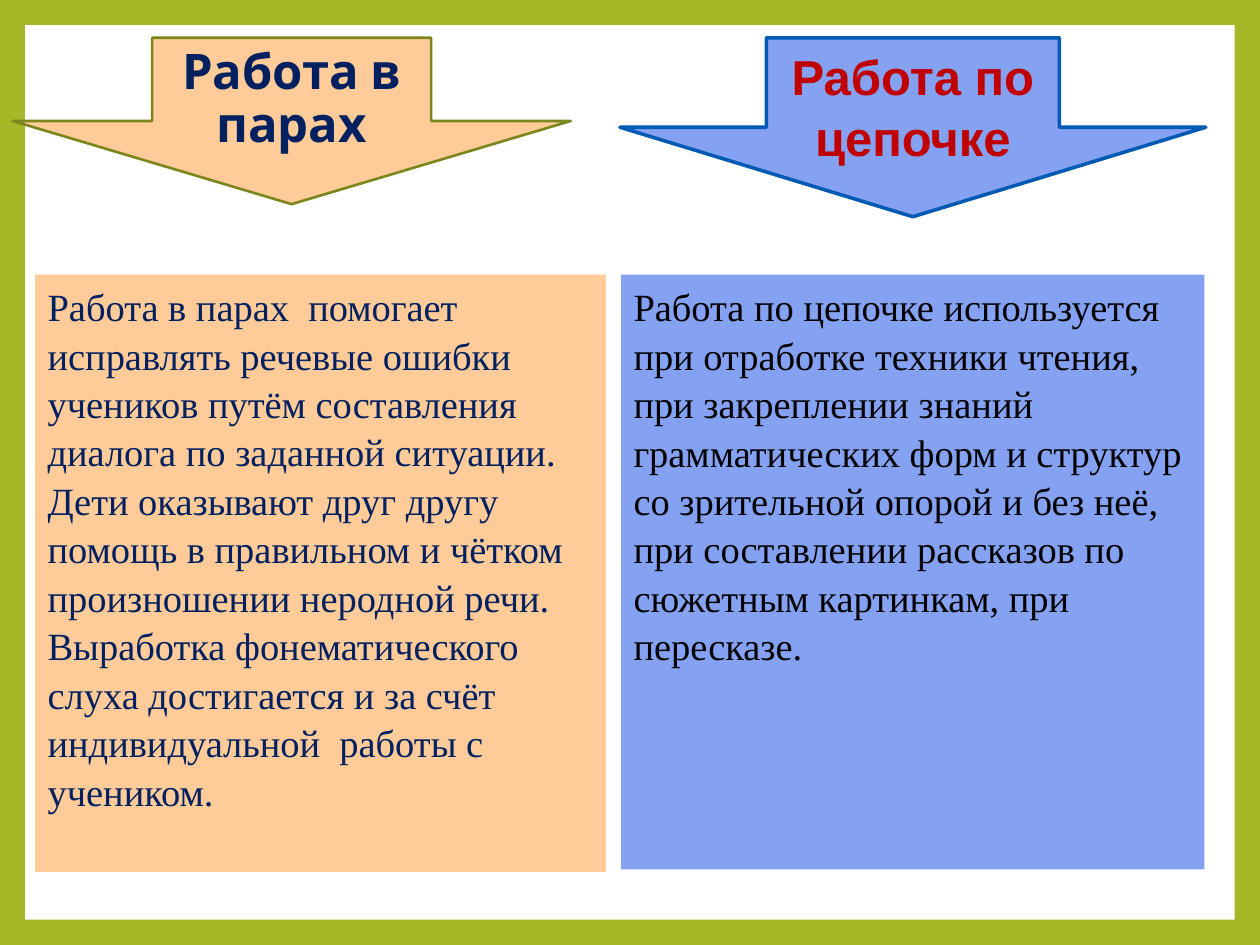
"""Builds a slide comparing pair work and chain work in two columns."""
import pptx
import pptx.dml.color
import pptx.enum.shapes
import pptx.enum.text
import pptx.util

SHAPE = pptx.enum.shapes.MSO_SHAPE
ANCHOR = pptx.enum.text.MSO_ANCHOR
ALIGN = pptx.enum.text.PP_ALIGN

COLORS = {
    "frame": "A6B727", "page": "FFFFFF", "peach": "FFCC99", "blue": "84A1F2",
    "olive": "7B871D", "azure": "0059B2", "navy": "002060", "red": "C00000",
    "black": "000000",
}
WIDTH, HEIGHT, MARGIN = 10, 7.5, 0.2
ARROW_TOP, PANEL_TOP = 0.3, 2.18

COLUMNS = [
    {
        "fill": "peach",
        "arrow": (0.1, 4.43, 1.32), "line": ("olive", 1.5),
        "title": "Работа в парах",
        "title_format": {"font": "Cabin", "color": "navy", "spacing": 0.9},
        "panel": (0.28, 4.53, 4.74),
        "body": "Работа в парах  помогает исправлять речевые ошибки учеников "
                "путём составления диалога по заданной ситуации. Дети оказывают "
                "друг другу помощь в правильном и чётком произношении неродной "
                "речи. Выработка фонематического слуха достигается и за счёт "
                "индивидуальной  работы с учеником.",
        "body_color": "navy",
    },
    {
        "fill": "blue",
        "arrow": (4.92, 4.65, 1.42), "line": ("azure", 2),
        "title": "Работа по цепочке",
        "title_format": {"font": "Arial", "color": "red", "spacing": 1.05},
        "panel": (4.93, 4.63, 4.72),
        "body": "Работа по цепочке используется при отработке техники чтения, "
                "при закреплении знаний грамматических форм и структур со "
                "зрительной опорой и без неё, при составлении рассказов по "
                "сюжетным картинкам, при пересказе.",
        "body_color": "black",
    },
]


def rgb(name):
    return pptx.dml.color.RGBColor.from_string(COLORS[name])


def add_block(s, kind, left, top, width, height, fill, line=None):
    box = [pptx.util.Inches(v) for v in (left, top, width, height)]
    sp = s.shapes.add_shape(kind, *box)
    sp.shadow.inherit = False
    sp.fill.solid()
    sp.fill.fore_color.rgb = rgb(fill)
    if line:
        color, weight = line
        sp.line.color.rgb = rgb(color)
        sp.line.width = pptx.util.Pt(weight)
    else:
        sp.line.fill.background()
    return sp


def write(sp, text, font, size, color, spacing, bold=False,
          align=ALIGN.LEFT, anchor=ANCHOR.TOP):
    tf = sp.text_frame
    tf.word_wrap = True
    tf.vertical_anchor = anchor
    p = tf.paragraphs[0]
    p.alignment = align
    p.line_spacing = spacing
    r = p.add_run()
    r.text = text
    r.font.name = font
    r.font.size = pptx.util.Pt(size)
    r.font.bold = bold
    r.font.color.rgb = rgb(color)


def main():
    prs = pptx.Presentation()
    prs.slide_width = pptx.util.Inches(WIDTH)
    prs.slide_height = pptx.util.Inches(HEIGHT)
    s = prs.slides.add_slide(prs.slide_layouts[6])
    s.background.fill.solid()
    s.background.fill.fore_color.rgb = rgb("frame")
    add_block(s, SHAPE.RECTANGLE, MARGIN, MARGIN,
              WIDTH - 2 * MARGIN, HEIGHT - 2 * MARGIN, "page")

    for col in COLUMNS:
        left, width, height = col["arrow"]
        arrow = add_block(s, SHAPE.DOWN_ARROW, left, ARROW_TOP, width, height,
                          col["fill"], col["line"])
        write(arrow, col["title"], size=28, bold=True, align=ALIGN.CENTER,
              anchor=ANCHOR.MIDDLE, **col["title_format"])

        left, width, height = col["panel"]
        panel = add_block(s, SHAPE.RECTANGLE, left, PANEL_TOP, width, height,
                          col["fill"])
        write(panel, col["body"], font="Times New Roman", size=22,
              color=col["body_color"], spacing=1.05)

    prs.save("out.pptx")


if __name__ == "__main__":
    main()
